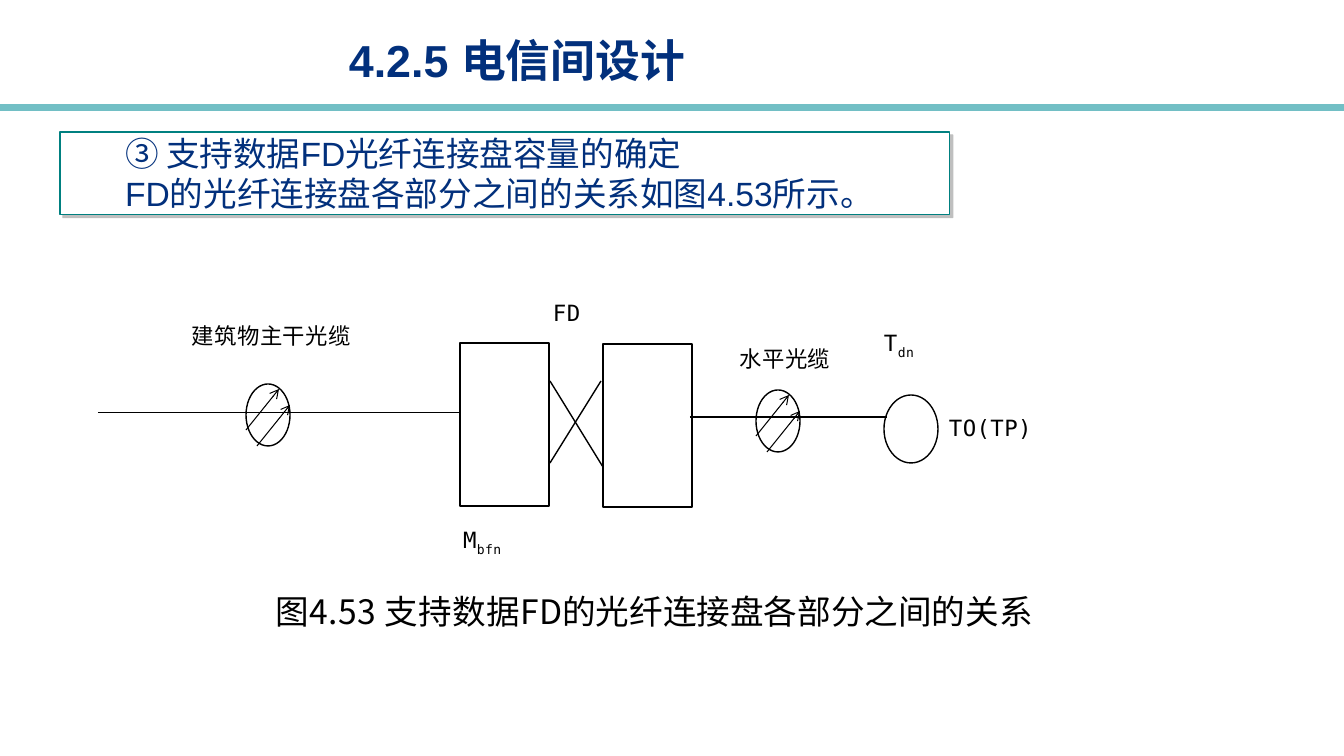
from dataclasses import dataclass
from lxml import etree
from pptx import Presentation, util as u
from pptx.dml.color import RGBColor
from pptx.enum import shapes, text
from pptx.oxml import parse_xml
from pptx.oxml.ns import nsdecls, qn


@dataclass(frozen=True)
class Theme:
    navy: str = "02307C"
    teal: str = "008080"
    rule: str = "72BFC5"
    white: str = "FFFFFF"
    black: str = "000000"
    sans: str = "Arial"
    cjk: str = "Noto Sans CJK SC"
    mono: str = "DejaVu Sans Mono"
    title: int = 32
    body: int = 24
    label: int = 16


THEME = Theme()
PX = 914400 / 100.8
SPACED = {"spc": "30"}
SUBSCRIPT = {"spc": "30", "baseline": "-25000"}

TITLE = ("4.2.5 电信间设计", (339, 28, 730, 64))
INTRO = (["③ 支持数据FD光纤连接盘容量的确定",
          "FD的光纤连接盘各部分之间的关系如图4.53所示。"], (60, 132, 890, 83))
INTRO_INDENT = 59
LABELS = [
    ([("水平光缆", SPACED)], (697, 321, 176, 75), THEME.cjk, True),
    ([("T", SPACED), ("dn", SUBSCRIPT)], (884, 307, 53, 75), THEME.mono, False),
    ([("TO(TP)", SPACED)], (949, 390, 129, 75), THEME.mono, False),
    ([("FD", SPACED)], (553, 275, 58, 75), THEME.mono, False),
    ([("M", SPACED), ("bfn", SUBSCRIPT)], (463, 504, 73, 75), THEME.mono, False),
]
BACKBONE_LABEL = ([("建筑物主干光缆", SPACED)], (106, 332, 331, 62))
CAPTION = ([("图4.53 支持数据", SPACED), ("FD的光纤连接盘各部分之间的关系", {})],
           (257, 574, 794, 75))
PANELS = [(460, 343), (603, 344)]
PANEL_SIZE = (89, 163)
OUTLET = (884, 395, 54, 68)
WIRES = [
    ((98, 413), (461, 413), 0.75),
    ((690, 417), (887, 417), 1.25),
    ((550, 463), (601, 381), 1),
    ((550, 381), (603, 467), 1),
]
CABLE_MARKS = [(246, 384), (756, 390)]
MARK_SIZE = (44, 62)
MARK_ARROWS = [((0, 46), (33, 5)), ((11, 62), (44, 21))]


def px(value):
    return u.Emu(round(value * PX))


def rgb(code):
    return RGBColor.from_string(code)


def style(para, font_name, size, color, bold=False):
    font = para.font
    font.name, font.size, font.bold = font_name, u.Pt(size), bold
    font.color.rgb = rgb(color)
    etree.SubElement(font._rPr, qn("a:ea")).set("typeface", THEME.cjk)


def add_label(page, spans, place, font_name, size, centred,
              anchor=text.MSO_ANCHOR.MIDDLE):
    frame = page.shapes.add_textbox(*map(px, place)).text_frame
    frame.word_wrap = True
    frame.vertical_anchor = anchor
    frame.margin_left = frame.margin_right = 0
    frame.margin_top = frame.margin_bottom = 0
    para = frame.paragraphs[0]
    para.alignment = text.PP_ALIGN.CENTER if centred else text.PP_ALIGN.LEFT
    style(para, font_name, size, THEME.black)
    for words, attributes in spans:
        span = para.add_run()
        span.text = words
        for name, value in attributes.items():
            span.font._rPr.set(name, value)
    return para


def add_outline(page, kind, place, color=THEME.black, width=1):
    box = page.shapes.add_shape(kind, *map(px, place))
    box.shadow.inherit = False
    box.fill.background()
    box.line.color.rgb = rgb(color)
    box.line.width = u.Pt(width)
    return box


def add_line(page, start, end, width, color=THEME.black, arrow=False):
    line = page.shapes.add_connector(
        shapes.MSO_CONNECTOR.STRAIGHT, *map(px, (*start, *end)))
    line.line.color.rgb = rgb(color)
    line.line.width = u.Pt(width)
    if arrow:
        etree.SubElement(line.line._get_or_add_ln(), qn("a:tailEnd")).set("type", "arrow")
    etree.SubElement(line._element.spPr, qn("a:effectLst"))


def add_title(page):
    words, place = TITLE
    frame = page.shapes.add_textbox(*map(px, place)).text_frame
    frame.word_wrap = True
    para = frame.paragraphs[0]
    para.text = words
    style(para, THEME.sans, THEME.title, THEME.navy, bold=True)


def add_intro(page):
    lines, place = INTRO
    box = add_outline(page, shapes.MSO_SHAPE.RECTANGLE, place, THEME.teal, 0.75)
    box.fill.solid()
    box.fill.fore_color.rgb = rgb(THEME.white)
    effects = box._element.spPr.find(qn("a:effectLst"))
    effects.append(parse_xml(
        f'<a:outerShdw {nsdecls("a")} dist="35921" dir="2700000" algn="ctr" rotWithShape="0">'
        '<a:srgbClr val="808080"><a:alpha val="50000"/></a:srgbClr></a:outerShdw>'))
    frame = box.text_frame
    frame.word_wrap = True
    frame.auto_size = text.MSO_AUTO_SIZE.SHAPE_TO_FIT_TEXT
    frame.vertical_anchor = text.MSO_ANCHOR.TOP
    frame.margin_left = frame.margin_right = px(6)
    frame.margin_top = frame.margin_bottom = px(1)
    for index, words in enumerate(lines):
        para = frame.add_paragraph() if index else frame.paragraphs[0]
        para.text = words
        para.alignment = text.PP_ALIGN.LEFT
        style(para, THEME.sans, THEME.body, THEME.navy)
        para._p.get_or_add_pPr().set("indent", str(px(INTRO_INDENT)))


def add_diagram(page):
    for start, end, width in WIRES:
        add_line(page, start, end, width)
    for corner in PANELS:
        add_outline(page, shapes.MSO_SHAPE.RECTANGLE, (*corner, *PANEL_SIZE))
    add_outline(page, shapes.MSO_SHAPE.OVAL, OUTLET)
    for left, top in CABLE_MARKS:
        add_outline(page, shapes.MSO_SHAPE.OVAL, (left, top, *MARK_SIZE))
        for (x1, y1), (x2, y2) in MARK_ARROWS:
            add_line(page, (left + x1, top + y1), (left + x2, top + y2), 0.75, arrow=True)
    for spans, place, font_name, centred in LABELS:
        add_label(page, spans, place, font_name, THEME.label, centred)
    spans, place = BACKBONE_LABEL
    para = add_label(page, spans, place, THEME.cjk, THEME.label, True, text.MSO_ANCHOR.TOP)
    para.line_spacing = u.Pt(12)
    spans, place = CAPTION
    add_label(page, spans, place, THEME.cjk, THEME.body, True)


def main():
    deck = Presentation()
    deck.slide_width, deck.slide_height = px(1344), px(756)
    page = deck.slides.add_slide(deck.slide_layouts[6])
    add_line(page, (0, 108), (1344, 108), 5, THEME.rule)
    add_intro(page)
    add_title(page)
    add_diagram(page)
    deck.save("out.pptx")


if __name__ == "__main__":
    main()
